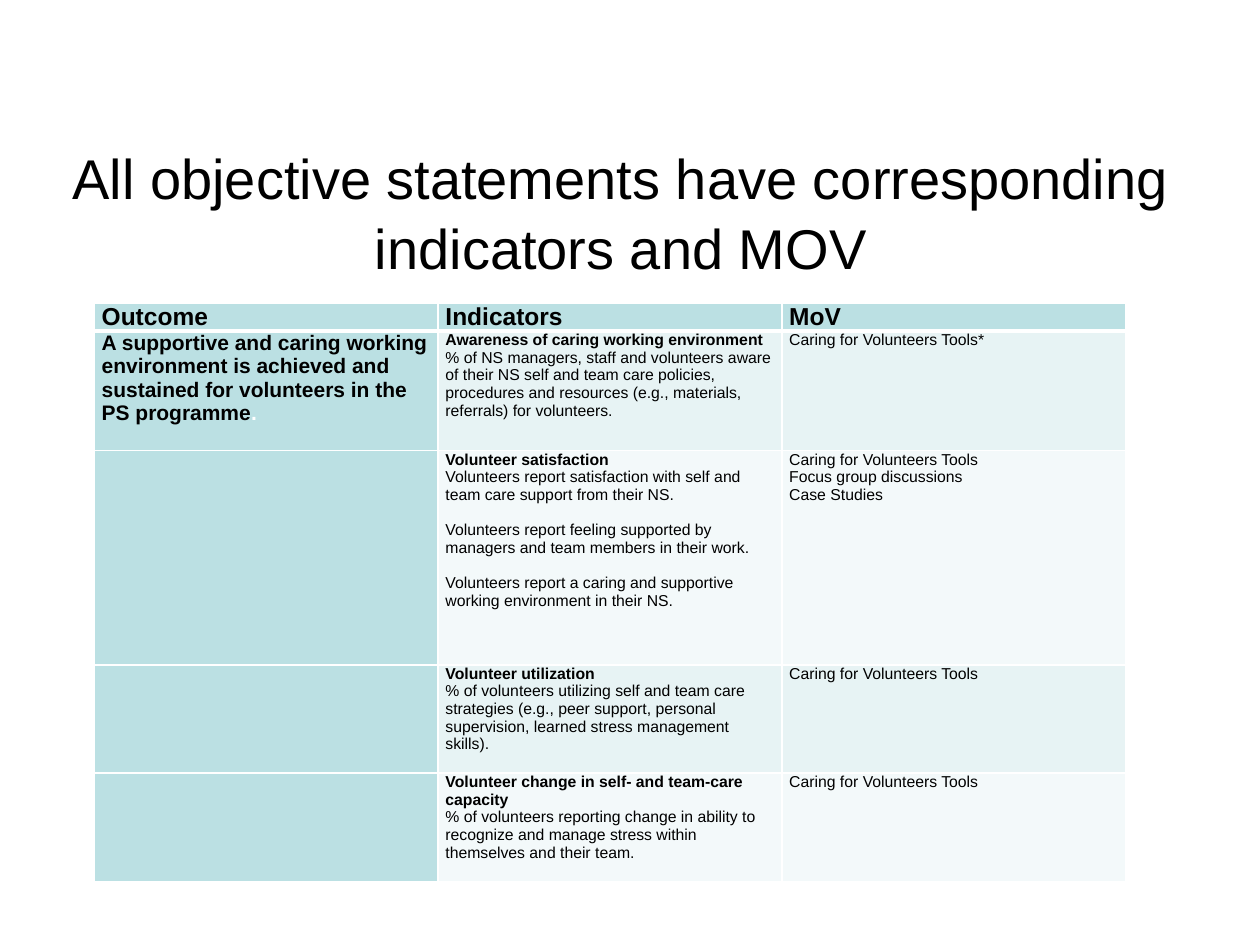
import lxml.etree
import pptx
import pptx.util
import pptx.dml.color
import pptx.enum.text
import pptx.oxml.ns

Cm, Pt = pptx.util.Cm, pptx.util.Pt
COLOURS = {"head": "BBE0E3", "odd": "E7F3F4", "even": "F3F9FA",
           "text": "000000", "white": "FFFFFF"}

# Content
TITLE = "All objective statements have corresponding indicators and MOV"
HEADINGS = ["Outcome", "Indicators", "MoV"]
OUTCOME = ("A supportive and caring working environment is achieved and "
           "sustained for volunteers in the PS programme")
TOOLS = "Caring for Volunteers Tools"
# Each row: indicator name, its statements, means of verification
INDICATORS = [
    ("Awareness of caring working environment",
     ["% of NS managers, staff and volunteers aware of their NS self and team care "
      "policies, procedures and resources (e.g., materials, referrals) for volunteers."],
     [TOOLS + "*"]),
    ("Volunteer satisfaction",
     ["Volunteers report satisfaction with self and team care support from their NS.",
      "Volunteers report feeling supported by managers and team members in their work.",
      "Volunteers report a caring and supportive working environment in their NS."],
     [TOOLS, "Focus group discussions", "Case Studies"]),
    ("Volunteer utilization",
     ["% of volunteers utilizing self and team care strategies (e.g., peer support, "
      "personal supervision, learned stress management skills)."],
     [TOOLS]),
    ("Volunteer change in self- and team-care capacity",
     ["% of volunteers reporting change in ability to recognize and manage stress "
      "within themselves and their team."],
     [TOOLS]),
]
ROW_HEIGHTS = [0.48, 2.41, 4.32, 2.18, 2.18]
COLUMN_WIDTH = 6.93

# Text formats
HEADING = {"size": Pt(14), "bold": True}
STATEMENT = {"size": Pt(12), "bold": True}
NAME = {"size": Pt(9), "bold": True}
BODY = {"size": Pt(9), "bold": False}


def add_span(para, text, style, colour="text"):
    span = para.add_run()
    span.text = text
    span.font.name = "Arial"
    span.font.color.rgb = pptx.dml.color.RGBColor.from_string(COLOURS[colour])
    for key, value in style.items():
        setattr(span.font, key, value)


def set_border(cell, side, width):
    properties = cell._tc.get_or_add_tcPr()
    line = lxml.etree.SubElement(properties, pptx.oxml.ns.qn("a:ln" + side), w=str(Pt(width)))
    fill = lxml.etree.SubElement(line, pptx.oxml.ns.qn("a:solidFill"))
    lxml.etree.SubElement(fill, pptx.oxml.ns.qn("a:srgbClr"), val=COLOURS["white"])


def fill_cell(cell, lines, fill, top=1, bottom=1):
    """Lines are (text, style, space before in points)."""
    margins = {"margin_left": Cm(0.15), "margin_right": Cm(0.15),
               "margin_top": 0, "margin_bottom": 0}
    for key, value in margins.items():
        setattr(cell, key, value)
    for side, width in (("L", 1), ("R", 1), ("T", top), ("B", bottom)):
        set_border(cell, side, width)
    cell.fill.solid()
    cell.fill.fore_color.rgb = pptx.dml.color.RGBColor.from_string(COLOURS[fill])
    frame = cell.text_frame
    for number, (text, style, gap) in enumerate(lines):
        para = frame.add_paragraph() if number else frame.paragraphs[0]
        para.space_before = Pt(gap)
        add_span(para, text, style)


def main():
    deck = pptx.Presentation()
    deck.slide_width, deck.slide_height = Cm(25.4), Cm(19.05)
    page = deck.slides.add_slide(deck.slide_layouts[5])

    # Title, closed by a line break that lifts it above the middle
    title = page.shapes.title
    title.left, title.top, title.width, title.height = Cm(1.09), Cm(3.33), Cm(22.86), Cm(3.18)
    frame = title.text_frame
    frame.word_wrap = True
    frame.auto_size = pptx.enum.text.MSO_AUTO_SIZE.NONE
    frame.vertical_anchor = pptx.enum.text.MSO_ANCHOR.MIDDLE
    para = frame.paragraphs[0]
    para.alignment = pptx.enum.text.PP_ALIGN.CENTER
    para.line_spacing = 1.05
    para.font.size = Pt(32)
    add_span(para, TITLE, {"size": Pt(32)})
    para.add_line_break()

    # Table grid
    table = page.shapes.add_table(
        len(ROW_HEIGHTS), len(HEADINGS), Cm(1.9), Cm(6.12),
        Cm(COLUMN_WIDTH * len(HEADINGS)), Cm(sum(ROW_HEIGHTS))).table
    for column in table.columns:
        column.width = Cm(COLUMN_WIDTH)
    for row, height in zip(table.rows, ROW_HEIGHTS):
        row.height = Cm(height)

    # Header row
    for column, heading in enumerate(HEADINGS):
        fill_cell(table.cell(0, column), [(heading, HEADING, 0)], "head", bottom=3)

    # Indicator rows
    for row, (name, statements, means) in enumerate(INDICATORS, 1):
        top = 3 if row == 1 else 1
        shade = "odd" if row % 2 else "even"
        outcome = [(OUTCOME, STATEMENT, 0)] if row == 1 else []
        details = [(text, BODY, 10.2 if number else 0)
                   for number, text in enumerate(statements)]
        fill_cell(table.cell(row, 0), outcome, "head", top)
        fill_cell(table.cell(row, 1), [(name, NAME, 0)] + details, shade, top)
        fill_cell(table.cell(row, 2), [(text, BODY, 0) for text in means], shade, top)
    add_span(table.cell(1, 0).text_frame.paragraphs[0], ".", STATEMENT, "white")

    deck.save("out.pptx")


if __name__ == "__main__":
    main()
